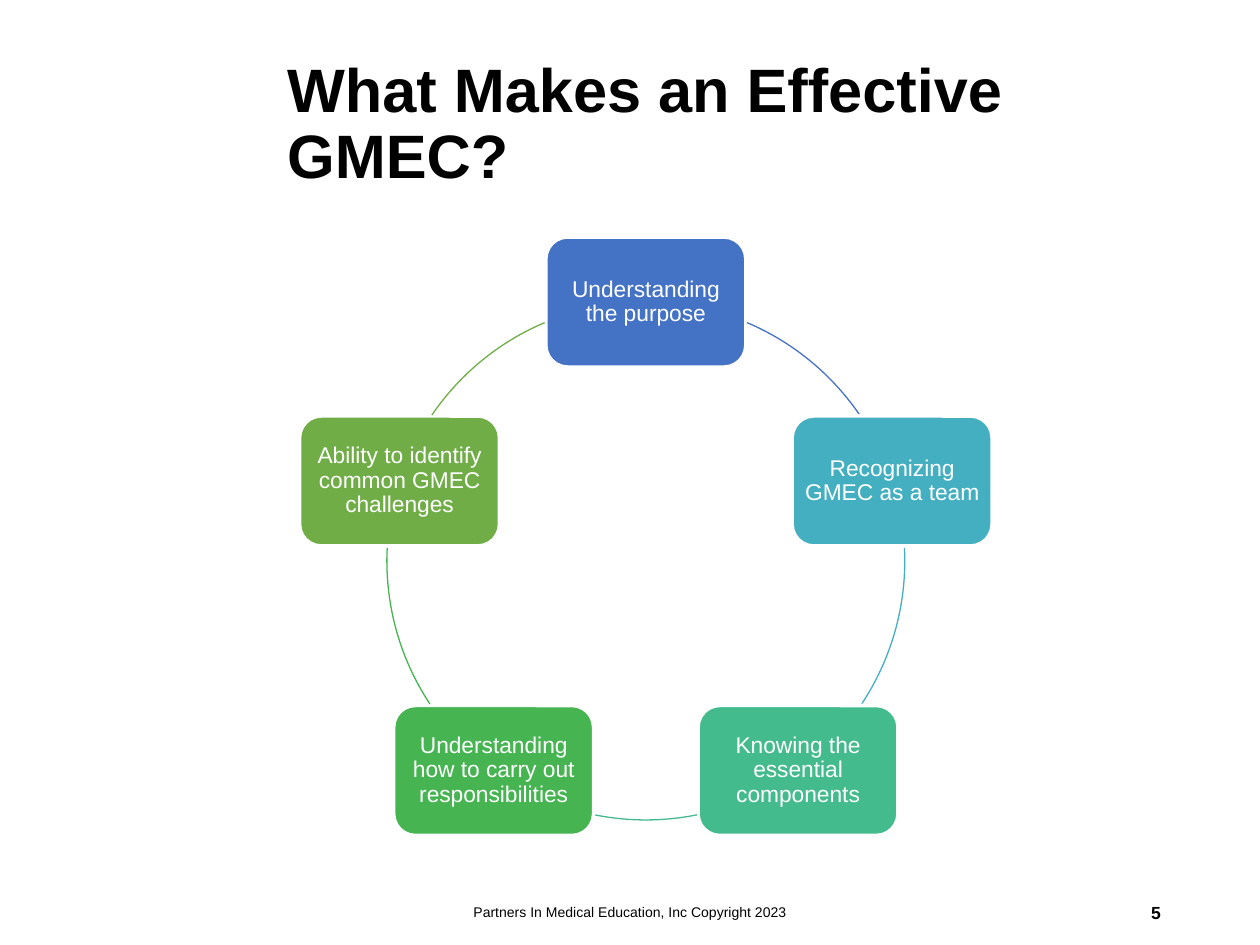
import math
from dataclasses import dataclass

import pptx
import pptx.dml.color
import pptx.enum.shapes
import pptx.enum.text
import pptx.util

Cm = pptx.util.Cm
Pt = pptx.util.Pt
SHAPE = pptx.enum.shapes.MSO_SHAPE
ALIGN = pptx.enum.text.PP_ALIGN


@dataclass
class Theme:
    font: str = "Arial"
    ink: str = "000000"
    paper: str = "FFFFFF"
    title: float = 35
    step: float = 13
    number: float = 10
    footer: float = 8


theme = Theme()


def rgb(value):
    return pptx.dml.color.RGBColor.from_string(value)


def write(sp, text, size, color=theme.ink, bold=False, align=ALIGN.CENTER,
          spacing=1.0, inset=(0.25, 0.13)):
    """Fill a shape with one paragraph; inset is (sides, top and bottom) in cm."""
    tf = sp.text_frame
    tf.word_wrap = True
    tf.auto_size = pptx.enum.text.MSO_AUTO_SIZE.NONE
    tf.vertical_anchor = pptx.enum.text.MSO_ANCHOR.MIDDLE
    tf.margin_left = tf.margin_right = Cm(inset[0])
    tf.margin_top = tf.margin_bottom = Cm(inset[1])
    p = tf.paragraphs[0]
    p.alignment = align
    p.line_spacing = spacing
    r = p.add_run()
    r.text = text
    r.font.name = theme.font
    r.font.size = Pt(size)
    r.font.bold = bold
    r.font.color.rgb = rgb(color)


prs = pptx.Presentation()
prs.slide_width, prs.slide_height = Cm(25.4), Cm(19.05)
s = prs.slides.add_slide(prs.slide_layouts[5])

# Title
title = s.shapes.title
title.left, title.top, title.width, title.height = Cm(5.54), Cm(0.69), Cm(18.14), Cm(3.68)
write(title, "What Makes an Effective GMEC?", theme.title, bold=True,
      align=ALIGN.LEFT, spacing=0.9)

# Cycle: label, colour, start and end angle of the arc that follows the box
steps = [
    ("Understanding the purpose", "4472C4", 293, 325.7),
    ("Recognizing GMEC as a team", "43AFC0", 357.1, 33.5),
    ("Knowing the essential components", "43BB8D", 78.6, 101.4),
    ("Understanding how to carry out responsibilities", "45B451", 146.5, 182.9),
    ("Ability to identify common GMEC challenges", "70AD47", 214.3, 247),
]
center_x, center_y, radius = 13.02, 11.31, 5.22
box_w, box_h = 4.03, 2.62

for i, (label, color, start, end) in enumerate(steps):
    angle = math.radians(360 / len(steps) * i - 90)
    x = center_x + radius * math.cos(angle)
    y = center_y + radius * math.sin(angle)
    box = s.shapes.add_shape(SHAPE.ROUNDED_RECTANGLE, Cm(x - box_w / 2),
                             Cm(y - box_h / 2), Cm(box_w), Cm(box_h))
    box.shadow.inherit = False
    box.fill.solid()
    box.fill.fore_color.rgb = rgb(color)
    box.line.color.rgb = rgb(theme.paper)
    box.line.width = Pt(2)
    write(box, label, theme.step, color=theme.paper, spacing=0.9, inset=(0.13, 0.13))

    arc = s.shapes.add_shape(SHAPE.ARC, Cm(center_x - radius), Cm(center_y - radius),
                             Cm(2 * radius), Cm(2 * radius))
    arc.shadow.inherit = False
    arc.fill.background()
    arc.line.color.rgb = rgb(color)
    arc.line.width = Pt(0.75)
    # An adjustment of 0.6 is one degree
    arc.adjustments[0] = start * 0.6
    arc.adjustments[1] = end * 0.6

# Slide number and footer
number = s.shapes.add_textbox(Cm(17.93), Cm(17.88), Cm(5.72), Cm(1.02))
write(number, "5", theme.number, bold=True, align=ALIGN.RIGHT)
footer = s.shapes.add_textbox(Cm(8.41), Cm(17.88), Cm(8.59), Cm(1.02))
write(footer, "Partners In Medical Education, Inc Copyright 2023", theme.footer)

prs.save("out.pptx")
